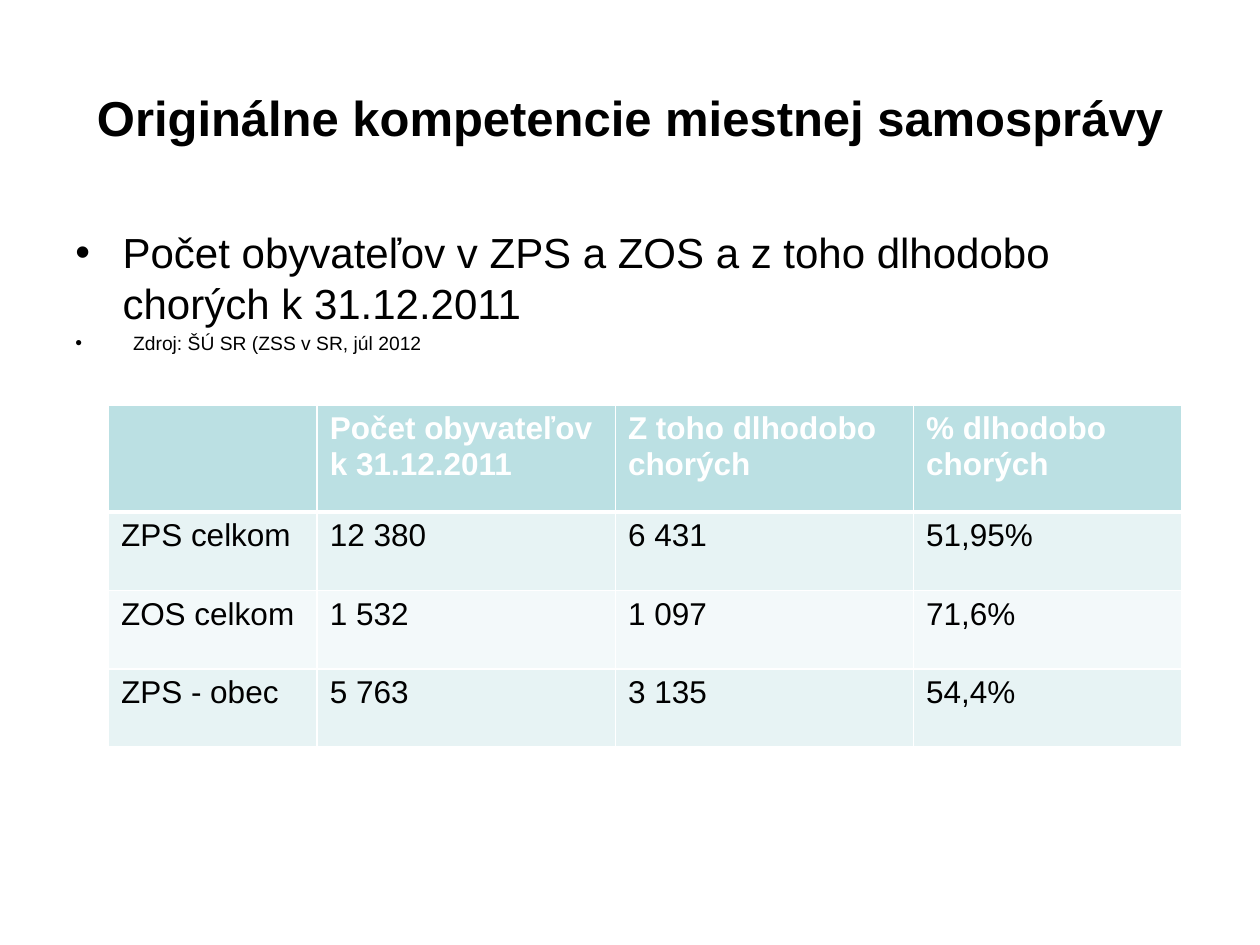
from lxml.etree import SubElement
from pptx import Presentation
from pptx.dml.color import RGBColor
from pptx.enum.text import MSO_ANCHOR as Anchor, PP_ALIGN as Align
from pptx.oxml.ns import qn
from pptx.util import Pt

BLACK = RGBColor(0x00, 0x00, 0x00)
WHITE = RGBColor(0xFF, 0xFF, 0xFF)
HEADER = RGBColor(0xBB, 0xE0, 0xE3)
BAND_DARK = RGBColor(0xE7, 0xF3, 0xF4)
BAND_LIGHT = RGBColor(0xF3, 0xF9, 0xFA)


class SlideBuilder:
    font_name = "Arial"

    def __init__(self, slide):
        self.slide = slide

    def style(self, paragraph, size, color=BLACK, bold=False):
        formats = {"name": self.font_name, "size": Pt(size), "bold": bold}
        for name, value in formats.items():
            setattr(paragraph.font, name, value)
        paragraph.font.color.rgb = color

    def text_frame(self, left, top, width, height, anchor):
        shape = self.slide.shapes.add_textbox(Pt(left), Pt(top), Pt(width), Pt(height))
        frame = shape.text_frame
        formats = {"word_wrap": True, "vertical_anchor": anchor}
        for name, value in formats.items():
            setattr(frame, name, value)
        return frame

    def title(self, text, box, size):
        paragraph = self.text_frame(*box, Anchor.MIDDLE).paragraphs[0]
        paragraph.text = text
        paragraph.alignment = Align.CENTER
        self.style(paragraph, size, bold=True)

    def bullets(self, items, box):
        frame = self.text_frame(*box, Anchor.TOP)
        for index, (text, size, indent) in enumerate(items):
            paragraph = frame.add_paragraph() if index else frame.paragraphs[0]
            paragraph.text = text
            if index:
                paragraph.space_before = Pt(0.2 * size)
            properties = paragraph._p.get_or_add_pPr()
            properties.set("marL", str(Pt(indent)))
            properties.set("indent", str(Pt(-indent)))
            SubElement(properties, qn("a:buFont"), typeface=self.font_name)
            SubElement(properties, qn("a:buChar"), char="•")
            self.style(paragraph, size)

    def borders(self, cell, widths):
        properties = cell._tc.get_or_add_tcPr()
        for position, (side, width) in enumerate(widths.items()):
            line = SubElement(properties, qn(f"a:ln{side}"), w=str(Pt(width)))
            fill = SubElement(line, qn("a:solidFill"))
            SubElement(fill, qn("a:srgbClr"), val=str(WHITE))
            properties.insert(position, line)

    def table(self, rows, left, top, widths, heights, size):
        shape = self.slide.shapes.add_table(
            len(rows), len(widths), Pt(left), Pt(top), Pt(sum(widths)), Pt(sum(heights))
        )
        table = shape.table
        for column, width in zip(table.columns, widths):
            column.width = Pt(width)
        for row, height in zip(table.rows, heights):
            row.height = Pt(height)
        for row_index, row in enumerate(rows):
            is_header = row_index == 0
            band = BAND_DARK if row_index % 2 else BAND_LIGHT
            edges = {
                "L": 1,
                "R": 1,
                "T": 3 if row_index == 1 else 1,
                "B": 3 if is_header else 1,
            }
            for column_index, text in enumerate(row):
                cell = table.cell(row_index, column_index)
                cell.text = text
                cell.fill.solid()
                cell.fill.fore_color.rgb = HEADER if is_header else band
                self.borders(cell, edges)
                color = WHITE if is_header else BLACK
                self.style(cell.text_frame.paragraphs[0], size, color, is_header)


def main():
    presentation = Presentation()
    presentation.slide_width = Pt(720)
    presentation.slide_height = Pt(540)
    builder = SlideBuilder(presentation.slides.add_slide(presentation.slide_layouts[6]))

    builder.title("Originálne kompetencie miestnej samosprávy", (36, 21.6, 648, 90), 28)
    builder.bullets(
        [
            ("Počet obyvateľov v ZPS a ZOS a z toho dlhodobo chorých k 31.12.2011", 24, 27),
            ("Zdroj: ŠÚ SR (ZSS v SR, júl 2012", 11, 33),
        ],
        (36, 126, 648, 356.4),
    )
    builder.table(
        [
            ("", "Počet obyvateľov k 31.12.2011", "Z toho dlhodobo chorých", "% dlhodobo chorých"),
            ("ZPS celkom", "12 380", "6 431", "51,95%"),
            ("ZOS celkom", "1 532", "1 097", "71,6%"),
            ("ZPS - obec", "5 763", "3 135", "54,4%"),
        ],
        left=62,
        top=231.4,
        widths=[119.3, 170.4, 170.4, 153.2],
        heights=[61.2] + [44.8] * 3,
        size=18,
    )
    presentation.save("out.pptx")


if __name__ == "__main__":
    main()
